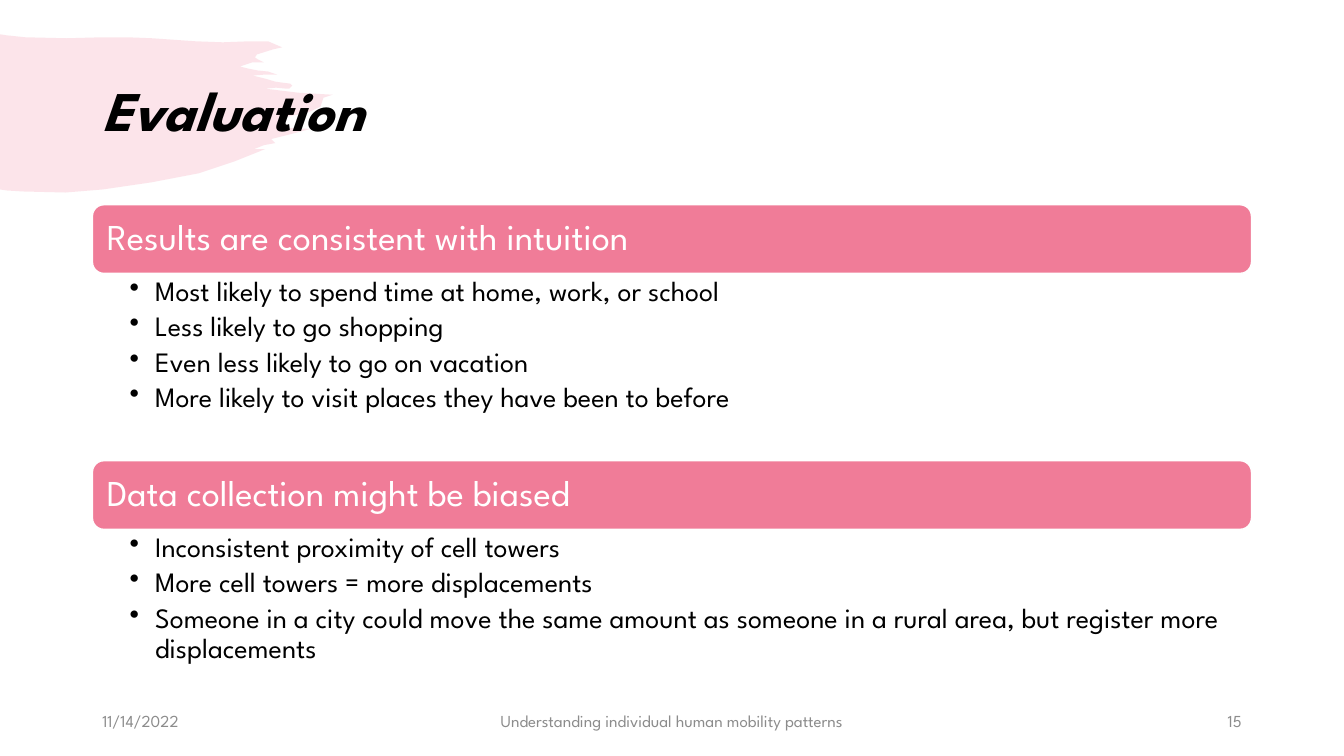
import lxml.etree
import pptx
import pptx.util
import pptx.dml.color
import pptx.enum.shapes
import pptx.enum.text
import pptx.oxml.ns

Cm = pptx.util.Cm
Pt = pptx.util.Pt
Align = pptx.enum.text.PP_ALIGN
Anchor = pptx.enum.text.MSO_ANCHOR
Shape = pptx.enum.shapes.MSO_SHAPE
qn = pptx.oxml.ns.qn

PINK = pptx.dml.color.RGBColor(0xF0, 0x7C, 0x98)
WHITE = pptx.dml.color.RGBColor(0xFF, 0xFF, 0xFF)
BLACK = pptx.dml.color.RGBColor(0x00, 0x00, 0x00)
GREY = pptx.dml.color.RGBColor(0x8C, 0x8C, 0x8C)
FONT = "League Spartan"

LEFT, WIDTH = 2.33, 29.21
BAR = 1.73

BRUSH = [
    (0, 34), (6, 35), (25, 37), (66, 38), (102, 37), (126, 37), (151, 38),
    (194, 41), (221, 42), (248, 41), (266, 41), (280, 47), (271, 49),
    (255, 54), (253, 57), (256, 59), (262, 62), (250, 62), (238, 66),
    (246, 68), (256, 70), (266, 71), (275, 74), (263, 74), (251, 75),
    (263, 78), (273, 81), (280, 82), (288, 83), (290, 85), (287, 88),
    (284, 88), (274, 87), (263, 88), (296, 92), (330, 94), (321, 97),
    (318, 106), (307, 111), (300, 113), (283, 116), (280, 120), (278, 125),
    (274, 128), (291, 127), (308, 128), (289, 133), (269, 138), (273, 142),
    (262, 144), (252, 148), (263, 148), (233, 160), (197, 172), (150, 181),
    (102, 188), (65, 191), (23, 190), (7, 189), (0, 188),
]

SECTIONS = [
    (5.16, 4.7, "Results are consistent with intuition", [
        "Most likely to spend time at home, work, or school",
        "Less likely to go shopping",
        "Even less likely to go on vacation",
        "More likely to visit places they have been to before",
    ]),
    (11.61, 3.58, "Data collection might be biased", [
        "Inconsistent proximity of cell towers",
        "More cell towers = more displacements",
        "Someone in a city could move the same amount as someone in a "
        "rural area, but register more displacements",
    ]),
]

FOOTER = [
    (LEFT, 7.62, "11/14/2022", Align.LEFT),
    (11.22, 11.43, "Understanding individual human mobility patterns",
     Align.CENTER),
    (23.92, 7.62, "15", Align.RIGHT),
]


def write(shape, text, size=20, color=BLACK, align=Align.LEFT,
          anchor=Anchor.MIDDLE, inset=(0.25, 0.13, 0.25, 0.13),
          bold=False, slant=False, line=0.9, after=0, bullet=False):
    frame = shape.text_frame
    frame.word_wrap = True
    frame.vertical_anchor = anchor
    (frame.margin_left, frame.margin_top,
     frame.margin_right, frame.margin_bottom) = map(Cm, inset)
    frame.text = text
    for para in frame.paragraphs:
        para.alignment = align
        para.line_spacing = line
        para.space_after = Pt(after)
        font = para.runs[0].font
        font.name = FONT
        font.size = Pt(size)
        font.color.rgb = color
        font.bold = bold
        font.italic = slant
        if bullet:
            props = para._p.get_or_add_pPr()
            props.set("marL", str(Cm(0.64)))
            props.set("indent", str(-Cm(0.64)))
            lxml.etree.SubElement(props, qn("a:buChar"), char="•")


def add_box(slide, left, top, width, height):
    return slide.shapes.add_textbox(Cm(left), Cm(top), Cm(width), Cm(height))


def add_brush(slide):
    pen = slide.shapes.build_freeform(*BRUSH[0], scale=Cm(2.54) / 100)
    pen.add_line_segments(BRUSH[1:], close=True)
    brush = pen.convert_to_shape()
    brush.shadow.inherit = False
    brush.line.fill.background()
    brush.fill.solid()
    brush.fill.fore_color.rgb = PINK
    tint = brush._element.spPr.find(".//" + qn("a:srgbClr"))
    lxml.etree.SubElement(tint, qn("a:alpha"), val="20000")


def add_title(slide, left, top, width, height):
    write(add_box(slide, left, top, width, height), "Evaluation",
          size=40, bold=True, slant=True)


def add_section(slide, left, top, width, height, head, points):
    bar = slide.shapes.add_shape(
        Shape.ROUNDED_RECTANGLE, Cm(left), Cm(top), Cm(width), Cm(BAR))
    bar.shadow.inherit = False
    bar.fill.solid()
    bar.fill.fore_color.rgb = PINK
    bar.line.color.rgb = WHITE
    bar.line.width = Pt(1)
    write(bar, head, size=26, color=WHITE, inset=(0.28,) * 4)
    write(add_box(slide, left, top + BAR, width, height), "\n".join(points),
          anchor=Anchor.TOP, inset=(0.94, 0.1, 0.51, 0.1), after=3.6,
          bullet=True)


def add_footer(slide, top, height):
    for left, width, text, align in FOOTER:
        write(add_box(slide, left, top, width, height), text,
              size=12, color=GREY, align=align, line=1.0, after=6)


def main():
    deck = pptx.Presentation()
    deck.slide_width = Cm(33.87)
    deck.slide_height = Cm(19.05)
    slide = deck.slides.add_slide(deck.slide_layouts[6])
    add_brush(slide)
    add_title(slide, LEFT, 1.01, WIDTH, 3.68)
    add_footer(slide, 17.66, 1.01)
    for top, height, head, points in SECTIONS:
        add_section(slide, LEFT, top, WIDTH, height, head, points)
    deck.save("out.pptx")


if __name__ == "__main__":
    main()
